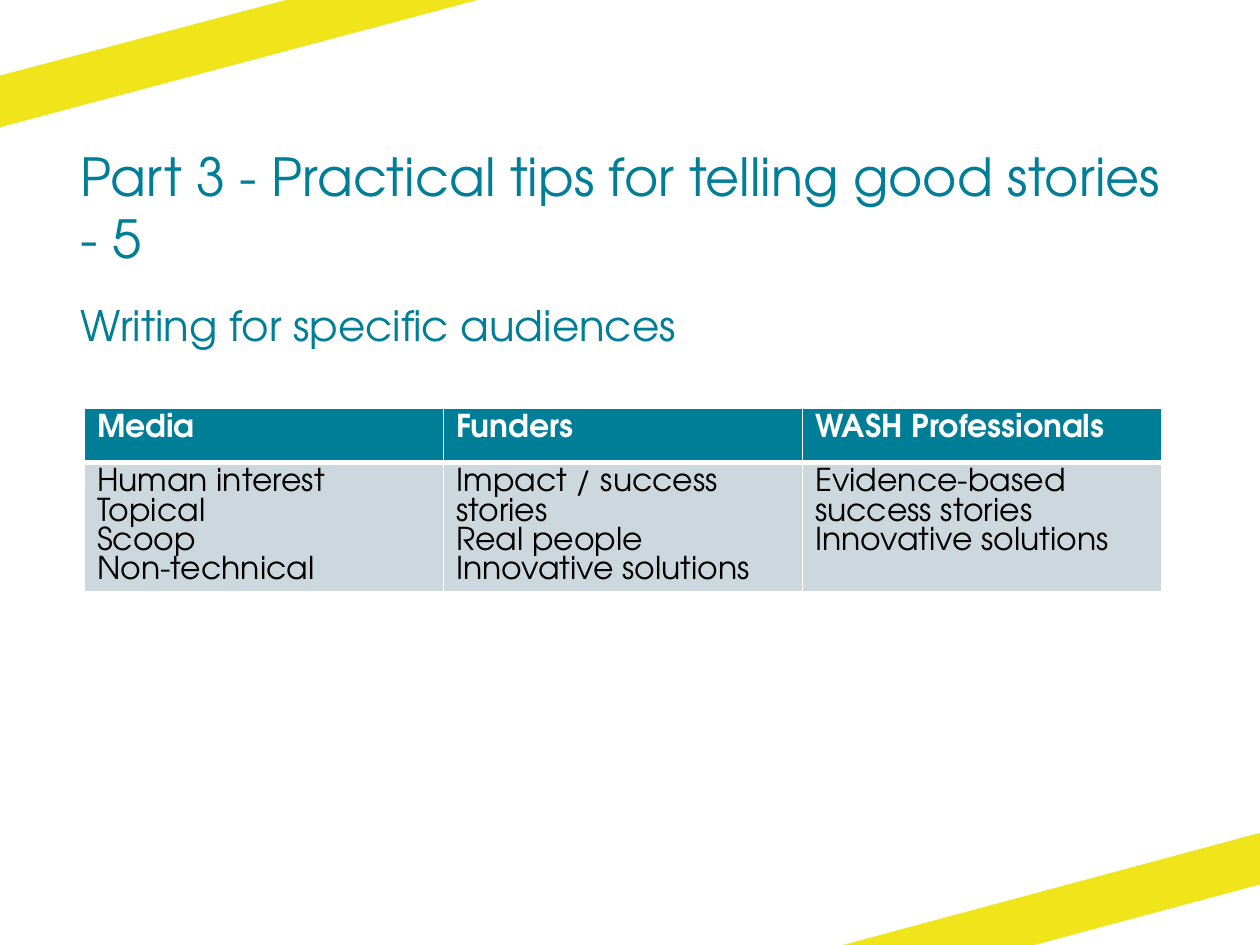
import pptx
import pptx.dml.color
import pptx.enum.text
import pptx.oxml
import pptx.oxml.ns
import pptx.util
from pptx.util import Inches

FONT = "TeX Gyre Adventor"
COLORS = {"teal": "007E97", "yellow": "F0E51B", "grey": "CCD8DD",
          "white": "FFFFFF", "black": "000000"}

TITLE = "Part 3 - Practical tips for telling good stories - 5"
SUBTITLE = "Writing for specific audiences"
AUDIENCES = [
    ("Media", ["Human interest", "Topical", "Scoop", "Non-technical"]),
    ("Funders", ["Impact / success stories", "Real people", "Innovative solutions"]),
    ("WASH Professionals", ["Evidence-based success stories", "Innovative solutions"]),
]
CORNER_BANDS = [
    [(2.27, 0), (0, 0.6), (0, 1.01), (3.79, 0)],
    [(6.69, 7.5), (8.21, 7.5), (10, 7.02), (10, 6.61)],
]
TEXT_LEFT, TEXT_WIDTH = 0.64, 8.73
TABLE_LEFT, TABLE_TOP, COLUMN_WIDTH = 0.67, 3.24, 2.85
ROW_HEIGHTS = [0.43, 1.02]
HEADER_RULE, THIN_RULE = 3, 1


def rgb(name):
    return pptx.dml.color.RGBColor.from_string(COLORS[name])


def style(paragraph, size, color, bold=False, line_spacing=None):
    font = paragraph.font
    font.name, font.size, font.bold = FONT, pptx.util.Pt(size), bold
    font.color.rgb = rgb(color)
    if line_spacing:
        paragraph.line_spacing = pptx.util.Pt(line_spacing)


def add_band(slide, corners):
    points = [(Inches(x), Inches(y)) for x, y in corners]
    builder = slide.shapes.build_freeform(*points[0])
    builder.add_line_segments(points[1:], close=True)
    band = builder.convert_to_shape()
    band.fill.solid()
    band.fill.fore_color.rgb = rgb("yellow")
    band.line.fill.background()
    band.shadow.inherit = False


def add_heading(slide, text, top, height, size, anchor, line_spacing=None):
    heading = slide.shapes.add_textbox(
        Inches(TEXT_LEFT), Inches(top), Inches(TEXT_WIDTH), Inches(height))
    frame = heading.text_frame
    frame.word_wrap = True
    frame.vertical_anchor = anchor
    frame.margin_left = frame.margin_right = frame.margin_top = frame.margin_bottom = 0
    frame.text = text
    style(frame.paragraphs[0], size, "teal", line_spacing=line_spacing)


def set_borders(cell, top, bottom):
    """Draw white borders; they must come before the fill in the cell's XML."""
    properties = cell._tc.get_or_add_tcPr()
    sides = [("lnL", THIN_RULE), ("lnR", THIN_RULE), ("lnT", top), ("lnB", bottom)]
    for position, (side, points) in enumerate(sides):
        properties.insert(position, pptx.oxml.parse_xml(
            f'<a:{side} {pptx.oxml.ns.nsdecls("a")} w="{pptx.util.Pt(points)}">'
            f'<a:solidFill><a:srgbClr val="{COLORS["white"]}"/></a:solidFill>'
            f'</a:{side}>'))


def fill_cell(cell, lines, fill, color, bold, top, bottom):
    cell.fill.solid()
    cell.fill.fore_color.rgb = rgb(fill)
    cell.text_frame.text = "\n".join(lines)
    for paragraph in cell.text_frame.paragraphs:
        style(paragraph, 18, color, bold, line_spacing=16.7)
    set_borders(cell, top, bottom)


def add_audience_table(slide):
    table = slide.shapes.add_table(
        len(ROW_HEIGHTS), len(AUDIENCES), Inches(TABLE_LEFT), Inches(TABLE_TOP),
        Inches(COLUMN_WIDTH * len(AUDIENCES)), Inches(sum(ROW_HEIGHTS))).table
    for row, height in zip(table.rows, ROW_HEIGHTS):
        row.height = Inches(height)
    for column, (audience, tips) in enumerate(AUDIENCES):
        table.columns[column].width = Inches(COLUMN_WIDTH)
        fill_cell(table.cell(0, column), [audience], "teal", "white", True,
                  THIN_RULE, HEADER_RULE)
        fill_cell(table.cell(1, column), tips, "grey", "black", False,
                  HEADER_RULE, THIN_RULE)


def main():
    deck = pptx.Presentation()
    deck.slide_width, deck.slide_height = Inches(10), Inches(7.5)
    slide = deck.slides.add_slide(deck.slide_layouts[6])
    for corners in CORNER_BANDS:
        add_band(slide, corners)
    anchors = pptx.enum.text.MSO_ANCHOR
    add_heading(slide, TITLE, 1.13, 1.02, 30, anchors.MIDDLE, line_spacing=35.4)
    add_heading(slide, SUBTITLE, 2.38, 0.5, 24, anchors.TOP)
    add_audience_table(slide)
    deck.save("out.pptx")


if __name__ == "__main__":
    main()
